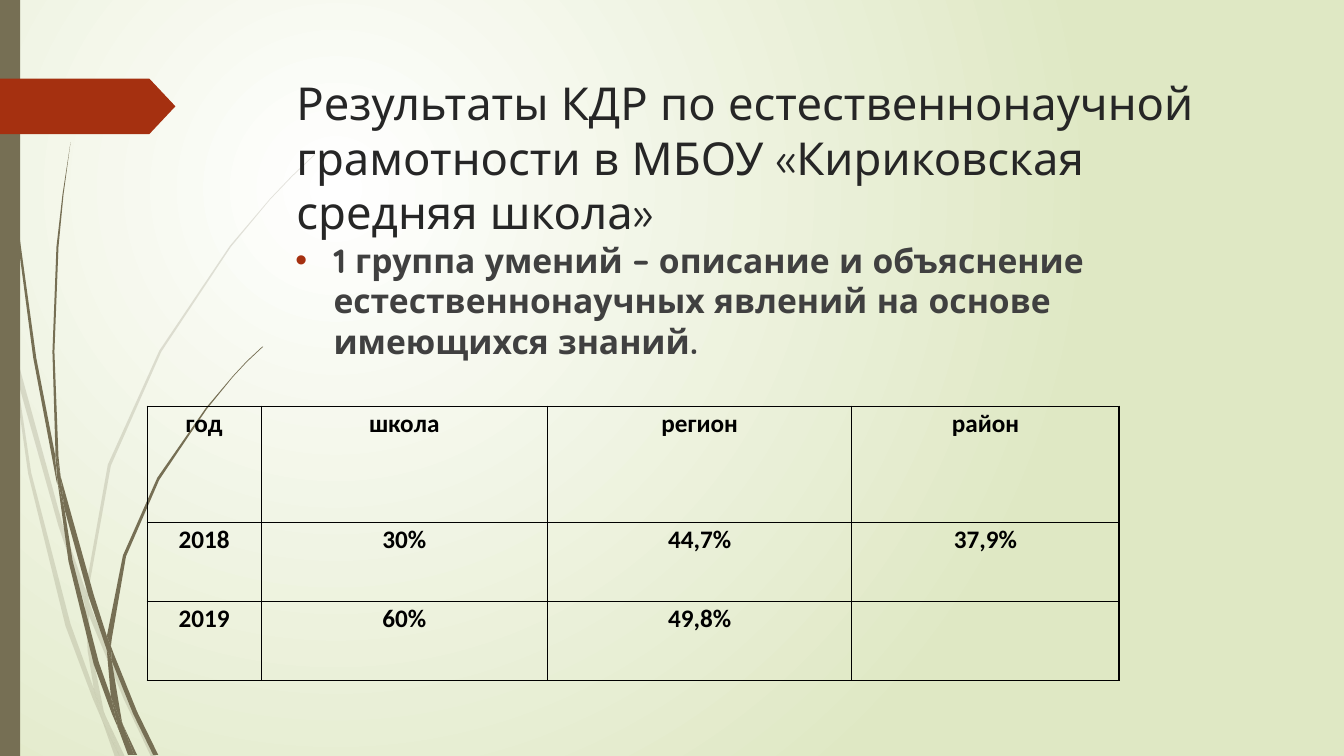
import pptx
import pptx.util
import pptx.dml.color
import pptx.enum.shapes
import pptx.enum.text
import pptx.oxml
import pptx.oxml.ns

PX = 9144  # 100 px to the inch
COLORS = {"olive": "766F54", "red": "A53010", "title": "262626", "body": "404040",
          "black": "000000", "white": "FFFFFF", "green": "DFE8C4"}
HEAD_FONT, TABLE_FONT = "Quicksand", "Calibri"
qn = pptx.oxml.ns.qn

# Outlines of the blades of grass, in px.
PALE_GRASS = [
    [(11, 350), (9, 322), (0, 282), (0, 299), (10, 344)],
    [(58, 522), (84, 599), (85, 586), (62, 520), (14, 345), (17, 376)],
    [(92, 607), (88, 596), (88, 610), (123, 694), (150, 751), (155, 751), (127, 692)],
    [(119, 751), (124, 751), (105, 711)],
    [(93, 683), (70, 619), (31, 469), (17, 376), (11, 350), (28, 470), (65, 621),
     (92, 693), (101, 714), (99, 707)],
    [(84, 599), (87, 646), (93, 683), (96, 692), (105, 711), (103, 706), (91, 646),
     (88, 610), (88, 608)],
    [(88, 584), (110, 462), (160, 349), (229, 245), (268, 198), (290, 175), (312, 154),
     (312, 153), (289, 175), (268, 197), (228, 244), (158, 348), (107, 461), (85, 584),
     (85, 586), (88, 596)],
    [(101, 714), (114, 751), (119, 751)],
    [(88, 608), (88, 610), (88, 596), (85, 586), (84, 599)],
    [(96, 692), (93, 683), (99, 707), (101, 714), (119, 751), (105, 711)],
]
DARK_GRASS = [
    [(7, 110), (17, 233), (33, 355), (56, 477), (57, 481), (55, 457), (55, 453), (36, 355),
     (19, 232), (8, 109), (5, 48), (4, 0), (3, 0), (4, 48)],
    [(88, 592), (106, 645), (106, 633), (106, 631), (93, 590), (60, 472), (64, 505)],
    [(113, 649), (110, 641), (111, 656), (132, 708), (152, 749), (157, 749), (136, 706)],
    [(110, 691), (98, 657), (72, 556), (64, 505), (57, 477), (68, 557), (93, 659),
     (111, 708), (117, 722), (116, 717)],
    [(60, 472), (58, 453), (54, 349), (58, 245), (63, 193), (70, 141), (62, 193), (56, 245),
     (52, 349), (55, 449)],
    [(133, 749), (136, 749), (122, 719)],
    [(57, 477), (64, 505), (60, 472), (55, 449), (55, 453)],
    [(111, 633), (125, 552), (158, 476), (205, 406), (231, 374), (245, 359), (261, 344),
     (260, 344), (245, 358), (231, 373), (204, 405), (156, 474), (122, 551), (106, 631),
     (110, 641)],
    [(117, 722), (127, 749), (131, 749)],
    [(106, 645), (110, 691), (116, 706), (122, 719), (121, 716), (111, 656), (109, 651)],
    [(106, 645), (109, 651), (111, 656), (110, 641), (106, 631), (106, 633)],
    [(116, 706), (110, 691), (116, 717), (117, 722), (130, 749), (133, 749), (122, 719)],
]
RESULTS = [["год", "школа", "регион", "район"],
           ["2018", "30%", "44,7%", "37,9%"],
           ["2019", "60%", "49,8%", ""]]


def rgb(name):
    return pptx.dml.color.RGBColor.from_string(COLORS[name])


def xml(tag, body="", attrs=""):
    """Parse one element of the drawing namespace."""
    return pptx.oxml.parse_xml(
        f'<a:{tag} {pptx.oxml.ns.nsdecls("a")} {attrs}>{body}</a:{tag}>')


class Deck:
    def __init__(self, width, height):
        self.prs = pptx.Presentation()
        self.prs.slide_width, self.prs.slide_height = width * PX, height * PX
        self.s = self.prs.slides.add_slide(self.prs.slide_layouts[5])

    def background(self, inner, outer):
        fill = self.s.background.fill
        fill.gradient()
        for stop, color in zip(fill.gradient_stops, (inner, outer)):
            stop.color.rgb = rgb(color)
        lin = self.s._element.find(".//" + qn("a:lin"))
        rect = '<a:fillToRect l="50000" t="50000" r="100000" b="100000"/>'
        lin.getparent().replace(lin, xml("path", rect, 'path="circle"'))

    def paint(self, sp, color, alpha=100):
        sp.shadow.inherit = False
        sp.line.fill.background()
        sp.fill.solid()
        sp.fill.fore_color.rgb = rgb(color)
        if alpha < 100:
            clr = sp._element.spPr.find(".//" + qn("a:srgbClr"))
            clr.append(xml("alpha", attrs=f'val="{alpha * 1000}"'))

    def shape(self, kind, x, y, w, h, color):
        sp = self.s.shapes.add_shape(kind, x * PX, y * PX, w * PX, h * PX)
        self.paint(sp, color)
        return sp

    def grass(self, blades, alpha):
        """Draw the blades as one group."""
        group = self.s.shapes.add_group_shape()
        for start, *rest in blades:
            builder = group.shapes.build_freeform(*start, scale=PX)
            builder.add_line_segments(rest, close=True)
            self.paint(builder.convert_to_shape(), "olive", alpha)

    def run(self, p, text, font, size, color, bold=False):
        r = p.add_run()
        r.text = text
        r.font.name, r.font.size, r.font.bold = font, pptx.util.Pt(size), bold
        r.font.color.rgb = rgb(color)

    def frame(self, sp, x, y, w, h, top):
        """Place a text shape, set its top inset and return its paragraph."""
        sp.left, sp.top, sp.width, sp.height = x * PX, y * PX, w * PX, h * PX
        tf = sp.text_frame
        tf.word_wrap = True
        tf.auto_size = pptx.enum.text.MSO_AUTO_SIZE.NONE
        tf.vertical_anchor = pptx.enum.text.MSO_ANCHOR.TOP
        tf.margin_top = top * PX
        p = tf.paragraphs[0]
        p.alignment = pptx.enum.text.PP_ALIGN.LEFT
        p.line_spacing = 1.0
        return p

    def title(self, text, x, y, w, h):
        sp = self.s.shapes.title
        sp._element.getparent().append(sp._element)  # in front of the grass
        p = self.frame(sp, x, y, w, h, 7)
        self.run(p, text, HEAD_FONT, 32.4, "title")

    def bullet(self, text, x, y, w, h):
        p = self.frame(self.s.shapes.add_textbox(0, 0, 0, 0), x, y, w, h, 5)
        self.run(p, text, HEAD_FONT, 24, "body", True)
        pPr = p._p.get_or_add_pPr()
        pPr.set("marL", str(38 * PX))
        pPr.set("indent", str(-38 * PX))
        pPr.append(xml("buClr", f'<a:srgbClr val="{COLORS["red"]}"/>'))
        pPr.append(xml("buFont", attrs='typeface="Arial"'))
        pPr.append(xml("buChar", attrs='char="•"'))

    def cell(self, cell, text):
        cell.fill.background()
        cell.margin_left = cell.margin_right = 7 * PX
        cell.margin_top = cell.margin_bottom = 0
        line = f'<a:solidFill><a:srgbClr val="{COLORS["black"]}"/></a:solidFill>'
        for i, side in enumerate(("lnL", "lnR", "lnT", "lnB")):
            cell._tc.get_or_add_tcPr().insert(i, xml(side, line, 'w="12700"'))
        if text:
            p = cell.text_frame.paragraphs[0]
            p.alignment = pptx.enum.text.PP_ALIGN.CENTER
            p.line_spacing = 1.07
            self.run(p, text, TABLE_FONT, 18, "black", True)

    def table(self, rows, x, y, widths, heights):
        table = self.s.shapes.add_table(len(heights), len(widths), x * PX, y * PX,
                                        sum(widths) * PX, sum(heights) * PX).table
        table.first_row = table.horz_banding = False
        for col, w in zip(table.columns, widths):
            col.width = w * PX
        for row, h, texts in zip(table.rows, heights, rows):
            row.height = h * PX
            for cell, text in zip(row.cells, texts):
                self.cell(cell, text)


def main():
    kinds = pptx.enum.shapes.MSO_SHAPE
    deck = Deck(1333, 750)
    deck.background("white", "green")
    deck.grass(PALE_GRASS, 20)
    deck.grass(DARK_GRASS, 100)
    deck.shape(kinds.RECTANGLE, 0, 0, 20, 750, "olive")
    arrow = deck.shape(kinds.PENTAGON, 0, 78, 174, 55, "red")
    arrow.adjustments[0] = 0.47
    deck.title("Результаты КДР по естественнонаучной грамотности в МБОУ "
               "«Кириковская средняя школа»", 284, 68, 975, 140)
    deck.bullet("1 группа умений – описание и объяснение естественнонаучных явлений "
                "на основе имеющихся знаний.", 283, 233, 975, 413)
    deck.table(RESULTS, 146, 403, [113, 284, 302, 265], [115, 79, 78])
    deck.prs.save("out.pptx")


if __name__ == "__main__":
    main()
